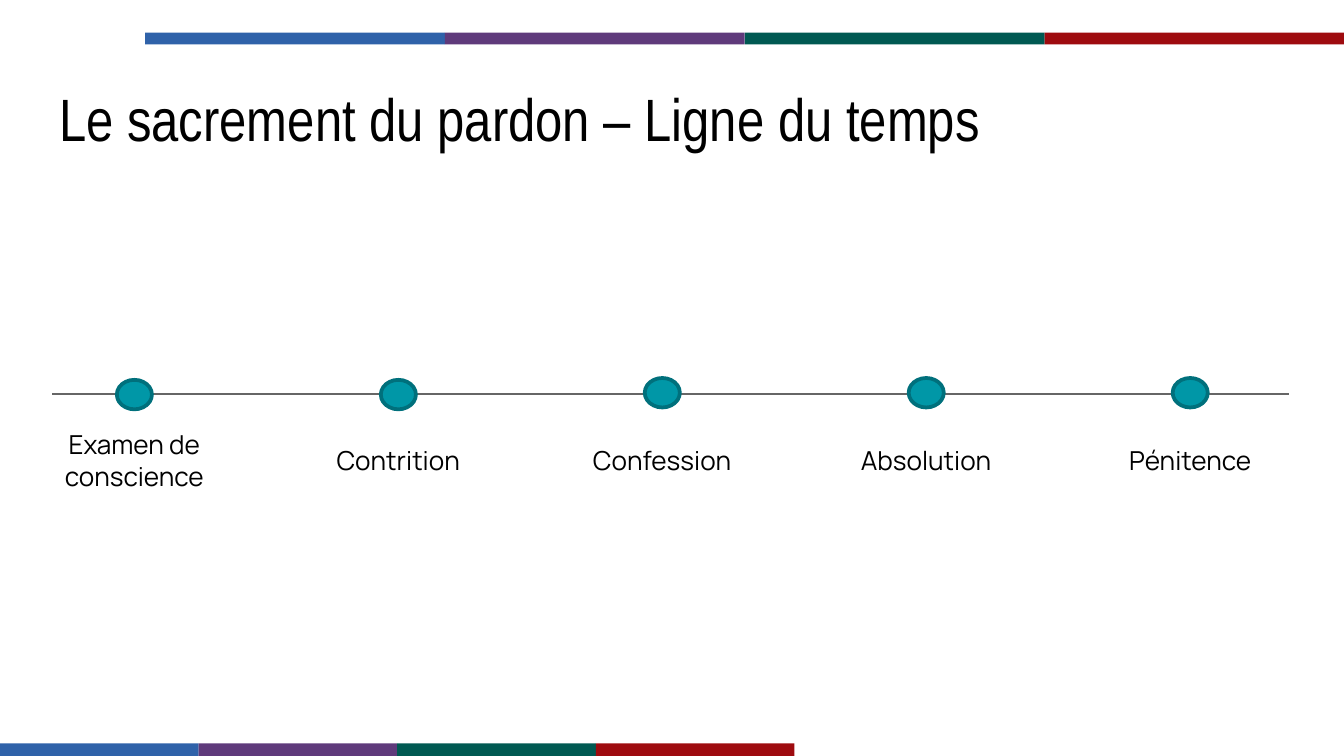
from dataclasses import dataclass

import pptx
import pptx.dml.color
import pptx.enum.shapes
import pptx.enum.text
import pptx.oxml.ns
import pptx.util
from lxml import etree

Pt = pptx.util.Pt
RGBColor = pptx.dml.color.RGBColor
SHAPE = pptx.enum.shapes.MSO_SHAPE
ALIGN = pptx.enum.text.PP_ALIGN
ANCHOR = pptx.enum.text.MSO_ANCHOR
AUTO_SIZE = pptx.enum.text.MSO_AUTO_SIZE

BLUE = RGBColor(0x2F, 0x62, 0xA9)
PURPLE = RGBColor(0x5F, 0x3A, 0x7B)
GREEN = RGBColor(0x00, 0x59, 0x52)
RED = RGBColor(0x9E, 0x0B, 0x0F)
TEAL = RGBColor(0x00, 0x97, 0xA7)
DARK_TEAL = RGBColor(0x00, 0x70, 0x7C)
GREY = RGBColor(0x66, 0x66, 0x66)
BLACK = RGBColor(0x00, 0x00, 0x00)
BAND_COLOURS = (BLUE, PURPLE, GREEN, RED)

FIRST_STEP_X, STEP_GAP = 72, 141.4
DOT_WIDTH, DOT_HEIGHT = 18.8, 15.8


@dataclass
class Band:
    left: float
    top: float
    segment_width: float
    height: float


@dataclass
class Step:
    label: str
    label_width: float
    dot_top: float
    label_top: float = 234.7
    label_height: float = 24.5
    wrap: bool = True


BANDS = (Band(77.8, 17.5, 160.6, 6.3), Band(0, 398.3, 106.4, 7.6))
STEPS = (
    Step("Examen de conscience", 122, 203.5, 226.2, 41),
    Step("Contrition", 97, 203.5),
    Step("Confession", 94, 202.5, wrap=False),
    Step("Absolution", 89, 202.5),
    Step("Pénitence", 89, 202.5),
)


def draw_band(slide: pptx.slide.Slide, band: Band) -> None:
    for index, colour in enumerate(BAND_COLOURS):
        segment = slide.shapes.add_shape(
            SHAPE.RECTANGLE, Pt(band.left + index * band.segment_width),
            Pt(band.top), Pt(band.segment_width), Pt(band.height))
        segment.shadow.inherit = False
        segment.fill.solid()
        segment.fill.fore_color.rgb = colour
        segment.line.fill.background()


def draw_title(slide: pptx.slide.Slide, wording: str) -> None:
    title = slide.shapes.title
    title.left, title.top = Pt(24.5), Pt(33.8)
    title.width, title.height = Pt(671), Pt(55.5)
    frame = title.text_frame
    frame.text = wording
    frame.auto_size = AUTO_SIZE.NONE
    frame.vertical_anchor = ANCHOR.BOTTOM
    frame.margin_left = frame.margin_right = Pt(7.2)
    frame.margin_top = frame.margin_bottom = Pt(7.2)
    format_paragraph(frame.paragraphs[0], ALIGN.LEFT, "Arial Narrow", 32)


def format_paragraph(paragraph, alignment: ALIGN, font_name: str, size: float) -> None:
    paragraph.alignment = alignment
    paragraph.font.name = font_name
    paragraph.font.size = Pt(size)
    paragraph.font.color.rgb = BLACK


def draw_axis(slide: pptx.slide.Slide, left: float, right: float, y: float) -> None:
    axis = slide.shapes.add_connector(
        pptx.enum.shapes.MSO_CONNECTOR.STRAIGHT, Pt(left), Pt(y), Pt(right), Pt(y))
    axis.line.color.rgb = GREY
    axis.line.width = Pt(0.75)
    etree.SubElement(axis._element.spPr, pptx.oxml.ns.qn("a:effectLst"))


def draw_step(slide: pptx.slide.Slide, step: Step, centre: float) -> None:
    dot = slide.shapes.add_shape(
        SHAPE.OVAL, Pt(centre - DOT_WIDTH / 2), Pt(step.dot_top),
        Pt(DOT_WIDTH), Pt(DOT_HEIGHT))
    dot.shadow.inherit = False
    dot.fill.solid()
    dot.fill.fore_color.rgb = TEAL
    dot.line.color.rgb = DARK_TEAL
    dot.line.width = Pt(2)

    label = slide.shapes.add_textbox(
        Pt(centre - step.label_width / 2), Pt(step.label_top),
        Pt(step.label_width), Pt(step.label_height))
    frame = label.text_frame
    frame.text = step.label
    frame.word_wrap = step.wrap
    frame.auto_size = AUTO_SIZE.SHAPE_TO_FIT_TEXT
    format_paragraph(frame.paragraphs[0], ALIGN.CENTER, "Manrope", 14)


def main() -> None:
    deck = pptx.Presentation()
    deck.slide_width, deck.slide_height = Pt(720), Pt(405)
    slide = deck.slides.add_slide(deck.slide_layouts.get_by_name("Title Only"))

    # Coloured bands at the top and bottom
    for band in BANDS:
        draw_band(slide, band)

    draw_title(slide, "Le sacrement du pardon – Ligne du temps")

    # Timeline
    draw_axis(slide, 28, 690.5, 211)
    for index, step in enumerate(STEPS):
        draw_step(slide, step, FIRST_STEP_X + index * STEP_GAP)

    deck.save("out.pptx")


if __name__ == "__main__":
    main()
